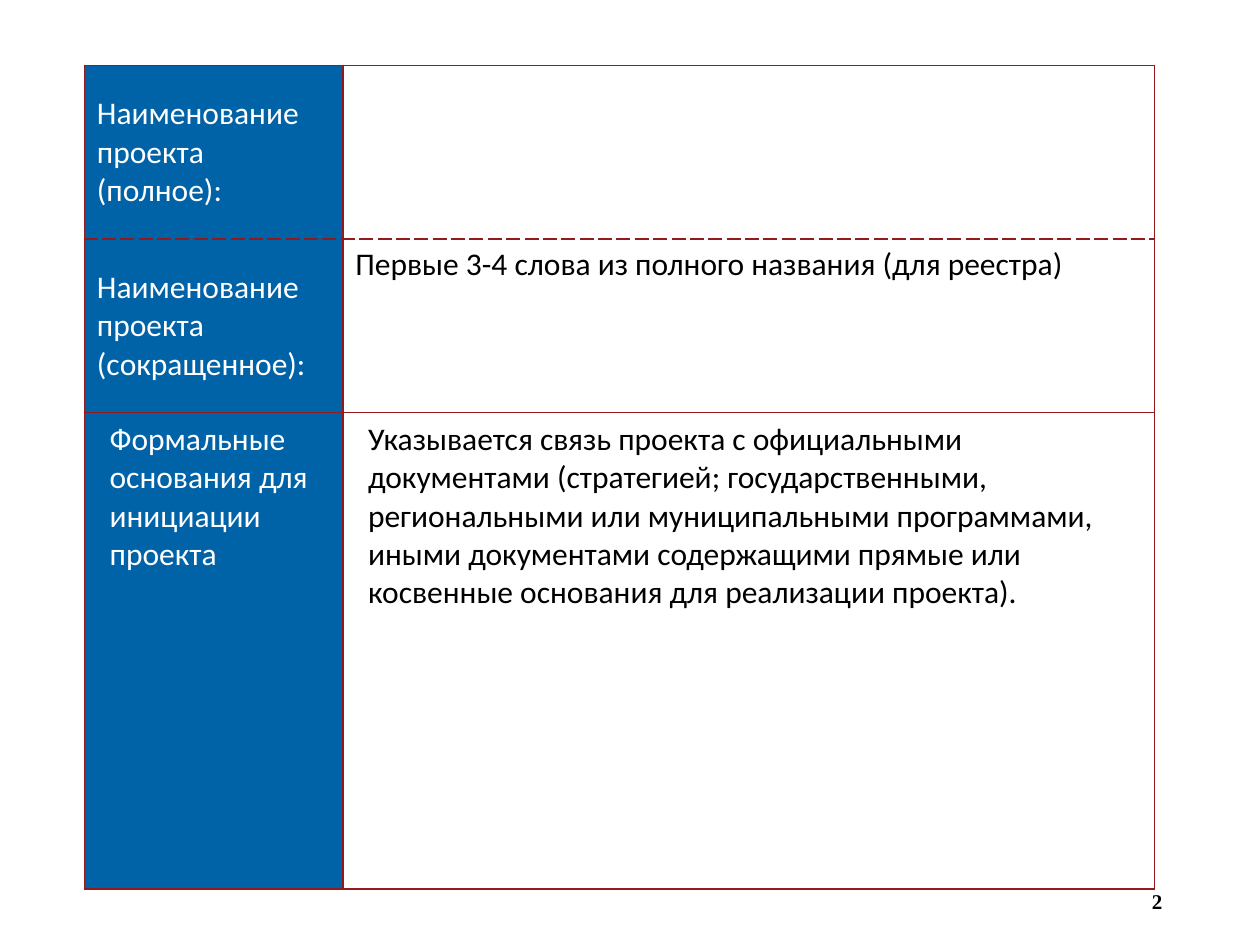
import pptx
import pptx.util
import pptx.dml.color
import pptx.enum.text
import pptx.oxml
import pptx.oxml.ns
from pptx.util import Cm

COLORS = {
    "label": "0062A7",
    "paper": "FFFFFF",
    "text": "000000",
    "border": "921A1D",
}
LABEL_WIDTH, VALUE_WIDTH = 5.21, 16.36
NAME_ROW, GROUNDS_ROW = 3.5, 9.6
MIDDLE = pptx.enum.text.MSO_ANCHOR.MIDDLE
TOP = pptx.enum.text.MSO_ANCHOR.TOP


def color(name):
    return pptx.dml.color.RGBColor.from_string(COLORS[name])


def add_run(paragraph, text, color_name, size=18, font="Calibri", bold=False):
    run = paragraph.add_run()
    run.text = text
    run.font.size = pptx.util.Pt(size)
    run.font.name = font
    run.font.bold = bold
    run.font.color.rgb = color(color_name)


def set_borders(cell, dashed=""):
    """Draw all four borders; the sides named in dashed are broken lines."""
    properties = cell._tc.get_or_add_tcPr()
    for side in "LRTB":
        dash = "sysDash" if side in dashed else "solid"
        properties.append(pptx.oxml.parse_xml(
            f'<a:ln{side} {pptx.oxml.ns.nsdecls("a")} w="{pptx.util.Pt(1)}">'
            f'<a:solidFill><a:srgbClr val="{COLORS["border"]}"/></a:solidFill>'
            f'<a:prstDash val="{dash}"/></a:ln{side}>'))


def fill_cell(cell, text, fill, text_color, dashed="", anchor=TOP,
              before=0, after=0, indent=0):
    set_borders(cell, dashed)
    cell.fill.solid()
    cell.fill.fore_color.rgb = color(fill)
    cell.vertical_anchor = anchor
    paragraph = cell.text_frame.paragraphs[0]
    paragraph.space_before = pptx.util.Pt(before)
    paragraph.space_after = pptx.util.Pt(after)
    if indent:
        paragraph._p.get_or_add_pPr().set("marL", str(Cm(indent)))
    if text:
        add_run(paragraph, text, text_color)


def add_grid(slide, left, top, row_count, row_height):
    frame = slide.shapes.add_table(
        row_count, 2, Cm(left), Cm(top),
        Cm(LABEL_WIDTH + VALUE_WIDTH), Cm(row_count * row_height))
    table = frame.table
    table.first_row = table.horz_banding = False
    for column, width in zip(table.columns, (LABEL_WIDTH, VALUE_WIDTH)):
        column.width = Cm(width)
    for row in table.rows:
        row.height = Cm(row_height)
    return table


def add_names(slide, left, top):
    rows = [
        ("Наименование проекта (полное):", "", "B"),
        ("Наименование проекта (сокращенное):",
         "Первые 3-4 слова из полного названия (для реестра)", "T"),
    ]
    table = add_grid(slide, left, top, len(rows), NAME_ROW)
    for index, (label, value, dashed) in enumerate(rows):
        fill_cell(table.cell(index, 0), label, "label", "paper", dashed,
                  MIDDLE, before=12, after=12)
        fill_cell(table.cell(index, 1), value, "paper", "text", dashed)


def add_grounds(slide, left, top):
    table = add_grid(slide, left, top, 1, GROUNDS_ROW)
    contents = [
        ("Формальные основания для инициации проекта", "label", "paper"),
        ("Указывается связь проекта с официальными документами (стратегией; "
         "государственными, региональными или муниципальными программами, "
         "иными документами содержащими прямые или косвенные основания для "
         "реализации проекта).", "paper", "text"),
    ]
    for cell, (text, fill, text_color) in zip(table.rows[0].cells, contents):
        cell.margin_left = cell.margin_right = Cm(0.28)
        cell.margin_top = cell.margin_bottom = Cm(0.15)
        fill_cell(cell, text, fill, text_color, before=6, indent=0.23)


def add_page_number(slide, left, top, width, height):
    box = slide.shapes.add_textbox(Cm(left), Cm(top), Cm(width), Cm(height))
    frame = box.text_frame
    frame.word_wrap = True
    frame.vertical_anchor = MIDDLE
    paragraph = frame.paragraphs[0]
    paragraph.alignment = pptx.enum.text.PP_ALIGN.RIGHT
    add_run(paragraph, "2", "text", 12, "Times New Roman", bold=True)


def main():
    presentation = pptx.Presentation()
    presentation.slide_width, presentation.slide_height = Cm(25.4), Cm(19.05)
    slide = presentation.slides.add_slide(presentation.slide_layouts[6])

    # Page number
    add_page_number(slide, 17.96, 17.65, 5.72, 1.02)

    # Project names, with the formal grounds directly below
    left, top = 1.7, 1.32
    add_names(slide, left, top)
    add_grounds(slide, left, top + 2 * NAME_ROW)

    presentation.save("out.pptx")


if __name__ == "__main__":
    main()
